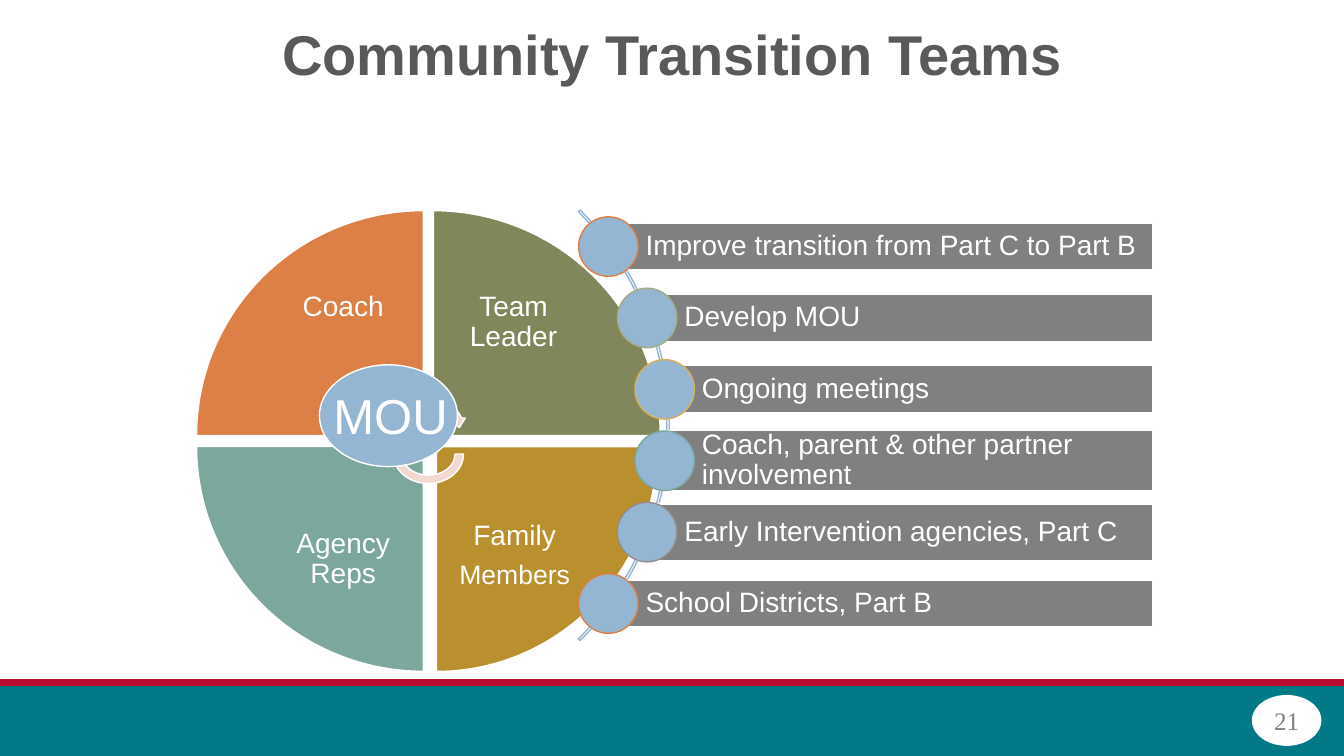
import math

import pptx
import pptx.dml.color
import pptx.enum.shapes
import pptx.enum.text
import pptx.util

Pt = pptx.util.Pt
Shape = pptx.enum.shapes.MSO_SHAPE
Align = pptx.enum.text.PP_ALIGN
Anchor = pptx.enum.text.MSO_ANCHOR

COLORS = {
    "white": "FFFFFF", "teal": "007A86", "red": "BA0C2F", "title": "595959",
    "gray": "808080", "blue": "94B6D2", "orange": "DD8047",
    "olive": "81875A", "gold": "BA8F2D", "sage": "7BA79D", "pink": "F2D8CF",
    "moss": "A5AB81", "sand": "D8B25C", "stone": "968C8C",
}

WEDGES = [
    (140.4, 150.5, 162, 160.6, 0, "orange"),
    (310.3, 149.8, 160.6, 162, 90, "olive"),
    (311.8, 319, 157.7, 160.6, 180, "gold"),
    (141.1, 318.2, 160.6, 162, 270, "sage"),
]

ROLES = [
    (187.9, 197.3, 114.5, Anchor.TOP, [("Coach", 20)]),
    (309.6, 197.3, 114.5, Anchor.TOP, [("Team Leader", 20)]),
    (311.8, 319, 111.6, Anchor.BOTTOM, [("Family", 20), ("Members", 19)]),
    (187.9, 319, 114.5, Anchor.BOTTOM, [("Agency Reps", 20)]),
]

TASKS = [
    ("Improve transition from Part C to Part B", 33.8, "orange"),
    ("Develop MOU", 33.8, "moss"),
    ("Ongoing meetings", 33.8, "sand"),
    ("Coach, parent & other partner involvement", 43.2, "sage"),
    ("Early Intervention agencies, Part C", 40.3, "stone"),
    ("School Districts, Part B", 33.8, "orange"),
]


def rgb(name):
    return pptx.dml.color.RGBColor.from_string(COLORS[name])


def draw(slide, kind, box, fill=None, line=None, width=1, turn=0):
    shape = slide.shapes.add_shape(kind, *map(Pt, box))
    shape.shadow.inherit = False
    shape.rotation = turn
    if fill:
        shape.fill.solid()
        shape.fill.fore_color.rgb = rgb(fill)
    else:
        shape.fill.background()
    if line:
        shape.line.color.rgb = rgb(line)
        shape.line.width = Pt(width)
    else:
        shape.line.fill.background()
    return shape


def write(shape, parts, color="white", font="Arial", bold=False,
          align=Align.CENTER, anchor=Anchor.MIDDLE, pads=(0, 0, 0, 0), gap=0.9):
    frame = shape.text_frame
    frame.word_wrap = True
    frame.auto_size = pptx.enum.text.MSO_AUTO_SIZE.NONE
    frame.vertical_anchor = anchor
    (frame.margin_left, frame.margin_top,
     frame.margin_right, frame.margin_bottom) = map(Pt, pads)
    for i, (text, size) in enumerate(parts):
        para = frame.add_paragraph() if i else frame.paragraphs[0]
        para.alignment = align
        para.line_spacing = gap
        para.space_before = Pt(0)
        para.space_after = Pt(7)
        run = para.add_run()
        run.text = text
        run.font.size = Pt(size)
        run.font.name = font
        run.font.bold = bold
        run.font.color.rgb = rgb(color)


def label(slide, box, parts, **style):
    write(slide.shapes.add_textbox(*map(Pt, box)), parts, **style)


def head(slide):
    title = slide.shapes.title
    title.left, title.top, title.width, title.height = map(
        Pt, (66, 12.2, 828, 57.6))
    write(title, [("Community Transition Teams", 40)], color="title",
          bold=True, pads=(7.2, 3.6, 7.2, 3.6))


def foot(slide):
    draw(slide, Shape.RECTANGLE, (0, 490, 960, 50), "teal")
    draw(slide, Shape.RECTANGLE, (0, 485.2, 960, 5), "red")
    badge = draw(slide, Shape.OVAL, (894.2, 496.4, 49.7, 36.4), "white")
    write(badge, [("21", 18)], color="gray", font="Times New Roman", gap=1)


def wheel(slide):
    for *box, turn, color in WEDGES:
        draw(slide, Shape.PIE_WEDGE, box, color, "white", turn=turn)
    for left, top, width, anchor, parts in ROLES:
        label(slide, (left, top, width, 113.8), parts, anchor=anchor,
              pads=(11.5,) * 4)
    for top, turn in ((281.5, 0), (300.2, 180)):
        draw(slide, Shape.CIRCULAR_ARROW, (277.9, top, 56.2, 48.2), "pink",
             "white", turn=turn)
    draw(slide, Shape.OVAL, (228.2, 260.6, 98.6, 72.7), "blue", "white")
    label(slide, (232, 265, 94, 67.7), [("MOU", 35)], pads=(2,) * 4)


def tasks(slide):
    mid_x, mid_y, radius = 260.8, 303.6, 215.5
    step, dot, right = 51, 42.5, 823.5
    arc = draw(slide, Shape.BLOCK_ARC, (43.2, 86.4, 434.9, 434.9), line="blue")
    for i, value in enumerate((189, 27, 0.4 / 100)):
        arc.adjustments[i] = value
    for i, (text, high, rim) in enumerate(TASKS):
        rise = (i - (len(TASKS) - 1) / 2) * step
        x = mid_x + math.sqrt(radius ** 2 - rise ** 2)
        y = mid_y + rise
        bar = draw(slide, Shape.RECTANGLE, (x, y - high / 2, right - x, high),
                   "gray", "white")
        write(bar, [(text, 20)], align=Align.LEFT, pads=(26.6, 4, 4, 4))
        draw(slide, Shape.OVAL, (x - dot / 2, y - dot / 2, dot, dot),
             "blue", rim)


def main():
    deck = pptx.Presentation()
    deck.slide_width, deck.slide_height = Pt(960), Pt(540)
    slide = deck.slides.add_slide(deck.slide_layouts[5])
    head(slide)
    foot(slide)
    wheel(slide)
    tasks(slide)
    deck.save("out.pptx")


if __name__ == "__main__":
    main()
